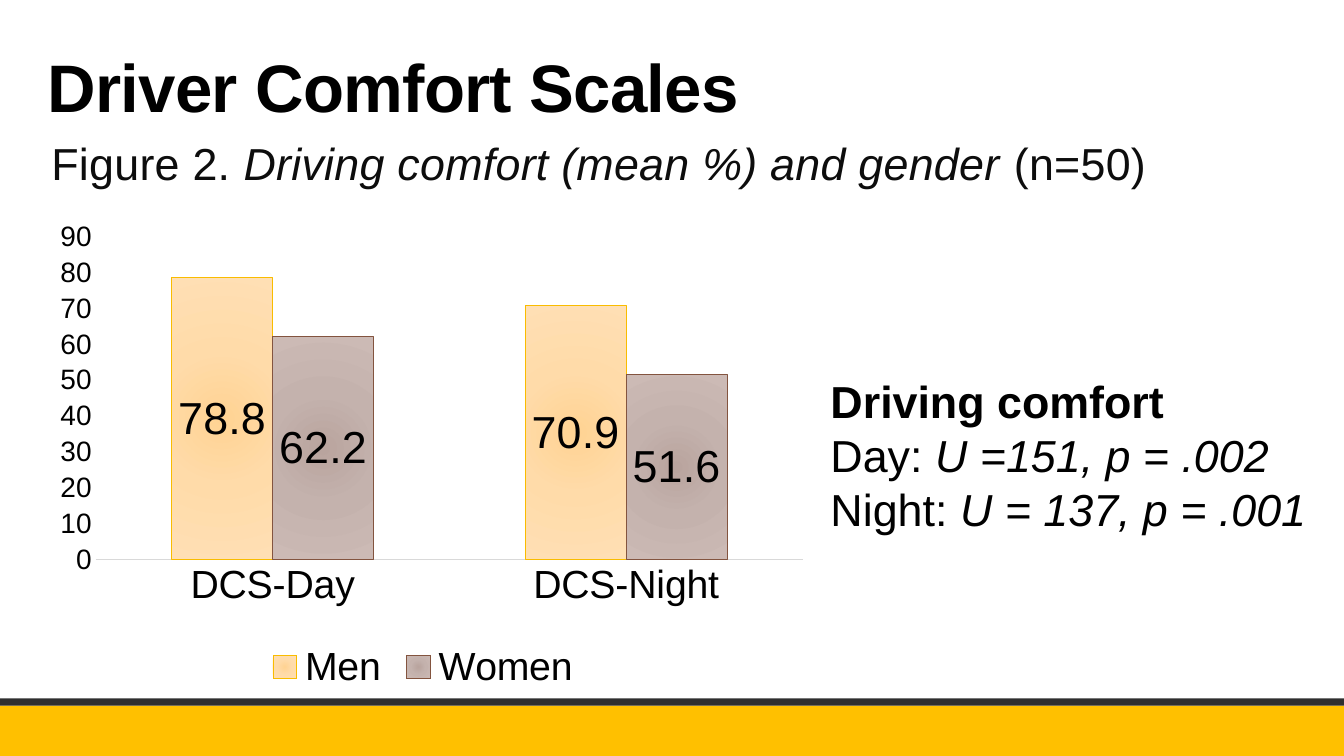
from pptx import Presentation
from pptx import util as u
from pptx.chart.data import CategoryChartData
from pptx.dml.color import RGBColor
from pptx.enum import chart as ch, shapes, text
from pptx.oxml import parse_xml
from pptx.oxml.ns import nsdecls

BLACK = RGBColor(0x00, 0x00, 0x00)
INK = RGBColor(0x0D, 0x0D, 0x0D)
GOLD = RGBColor(0xFF, 0xC0, 0x00)
CHARCOAL = RGBColor(0x2F, 0x2F, 0x2F)
AXIS_GREY = RGBColor(0xD9, 0xD9, 0xD9)
MEN_LINE = RGBColor(0xF9, 0xBC, 0x00)
WOMEN_LINE = RGBColor(0x83, 0x54, 0x3F)
# Gradient colours from the centre to the rim
MEN_FILL = RGBColor(0xFF, 0xD3, 0x93), RGBColor(0xFF, 0xDB, 0xA9), RGBColor(0xFF, 0xDF, 0xB4)
WOMEN_FILL = RGBColor(0xB9, 0xA4, 0x9E), RGBColor(0xC4, 0xB2, 0xAD), RGBColor(0xCC, 0xBA, 0xB5)


def format_font(font, size, color=BLACK, bold=False, italic=False):
    font.name = "Arial"
    font.size = u.Pt(size)
    font.bold = bold
    font.italic = italic
    font.color.rgb = color


def add_text(paragraph, words, size=32, spacing=None, **style):
    run = paragraph.add_run()
    run.text = words
    format_font(run.font, size, **style)
    if spacing is not None:
        run._r.get_or_add_rPr().set("spc", str(spacing))


def radial_fill(series, colors):
    stops = "".join(
        f'<a:gs pos="{pos}"><a:srgbClr val="{color}"/></a:gs>'
        for pos, color in zip((0, 45000, 100000), colors))
    series._element.get_or_add_spPr().insert(0, parse_xml(
        f'<a:gradFill {nsdecls("a")}><a:gsLst>{stops}</a:gsLst><a:path path="circle">'
        '<a:fillToRect l="100000" t="100000" r="100000" b="100000"/></a:path></a:gradFill>'))


def place_plot(chart, **box):
    plot_area = chart._chartSpace.chart.plotArea
    for layout in plot_area.findall("{*}layout"):
        plot_area.remove(layout)
    sizes = "".join(f'<c:{key} val="{value}"/>' for key, value in box.items())
    plot_area.insert(0, parse_xml(
        f'<c:layout {nsdecls("c")}><c:manualLayout><c:layoutTarget val="inner"/>'
        f'<c:xMode val="edge"/><c:yMode val="edge"/>{sizes}</c:manualLayout></c:layout>'))


class ComfortSlide:
    """Holds the left margin and the slide being filled."""
    left = u.Cm(0.94)

    def __init__(self, deck):
        self.width = deck.slide_width
        self.slide = deck.slides.add_slide(deck.slide_layouts[5])

    def band(self, top, height, color):
        band = self.slide.shapes.add_shape(
            shapes.MSO_SHAPE.RECTANGLE, 0, top, self.width, height)
        band.shadow.inherit = False
        band.fill.solid()
        band.fill.fore_color.rgb = color
        band.line.fill.background()

    def title(self, words):
        title = self.slide.shapes.title
        title.left, title.top = self.left, u.Cm(0.84)
        title.width, title.height = u.Cm(27.94), u.Cm(2.46)
        frame = title.text_frame
        frame.auto_size = text.MSO_AUTO_SIZE.NONE
        frame.vertical_anchor = text.MSO_ANCHOR.BOTTOM
        heading = frame.paragraphs[0]
        heading.alignment = text.PP_ALIGN.LEFT
        heading.line_spacing = 0.85
        add_text(heading, words, size=48, bold=True, spacing=-50)

    def text_box(self, left, top, width, height, lines, wrap=True, align=None):
        frame = self.slide.shapes.add_textbox(left, top, width, height).text_frame
        frame.word_wrap = wrap
        frame.auto_size = text.MSO_AUTO_SIZE.SHAPE_TO_FIT_TEXT
        for number, parts in enumerate(lines):
            line = frame.add_paragraph() if number else frame.paragraphs[0]
            line.alignment = align
            for words, style in parts:
                add_text(line, words, **style)

    def column_chart(self, top, width, height, categories, groups):
        data = CategoryChartData()
        data.categories = categories
        for name, values, _, _ in groups:
            data.add_series(name, values)
        chart = self.slide.shapes.add_chart(
            ch.XL_CHART_TYPE.COLUMN_CLUSTERED, self.left, top, width, height, data).chart
        chart.has_title = False
        chart.has_legend = True
        chart.legend.position = ch.XL_LEGEND_POSITION.BOTTOM
        chart.legend.include_in_layout = False
        format_font(chart.legend.font, 28)

        # Axes
        scale = chart.value_axis
        scale.minimum_scale, scale.maximum_scale, scale.major_unit = 0, 90, 10
        scale.has_major_gridlines = False
        scale.format.line.fill.background()
        for axis, size in ((chart.category_axis, 28), (scale, 20)):
            axis.major_tick_mark = ch.XL_TICK_MARK.NONE
            format_font(axis.tick_labels.font, size)
        chart.category_axis.format.line.color.rgb = AXIS_GREY
        chart.category_axis.format.line.width = u.Pt(0.75)

        # Columns and their values
        columns = chart.plots[0]
        columns.gap_width, columns.overlap = 150, 0
        columns.vary_by_categories = False
        for series, (_, _, fill, outline) in zip(columns.series, groups):
            series.format.line.color.rgb = outline
            series.format.line.width = u.Pt(0.75)
            radial_fill(series, fill)
            labels = series.data_labels
            labels.show_value = True
            labels.position = ch.XL_LABEL_POSITION.CENTER
            format_font(labels.font, 32)
        place_plot(chart, x=0.076, y=0.047, w=0.917, h=0.669)


def main():
    deck = Presentation()
    deck.slide_width, deck.slide_height = u.Cm(33.87), u.Cm(19.05)
    comfort = ComfortSlide(deck)

    # Footer bands
    comfort.band(u.Cm(17.78), u.Cm(1.27), GOLD)
    comfort.band(u.Cm(17.6), u.Cm(0.18), CHARCOAL)

    # Title and figure caption
    comfort.title("Driver Comfort Scales")
    caption = dict(color=INK, spacing=20)
    comfort.text_box(
        comfort.left, u.Cm(3.3), u.Cm(28.3), u.Cm(1.63),
        [[("Figure 2. ", caption),
          ("Driving comfort (mean %) and gender ", dict(caption, italic=True)),
          ("(n=50)", caption)]],
        wrap=False, align=text.PP_ALIGN.CENTER)

    # Comfort by gender
    comfort.column_chart(
        u.Cm(5.41), u.Cm(19.43), u.Cm(12.14), ["DCS-Day", "DCS-Night"],
        [("Men", (78.8, 70.9), MEN_FILL, MEN_LINE),
         ("Women", (62.2, 51.6), WOMEN_FILL, WOMEN_LINE)])

    # Test results
    comfort.text_box(
        u.Cm(20.68), u.Cm(9.3), u.Cm(14.05), u.Cm(4.37),
        [[("Driving comfort", dict(bold=True))],
         [("Day: ", {}), ("U =151, p = .002", dict(italic=True))],
         [("Night: ", {}), ("U = 137, p = .001", dict(italic=True))]])

    deck.save("out.pptx")


if __name__ == "__main__":
    main()
